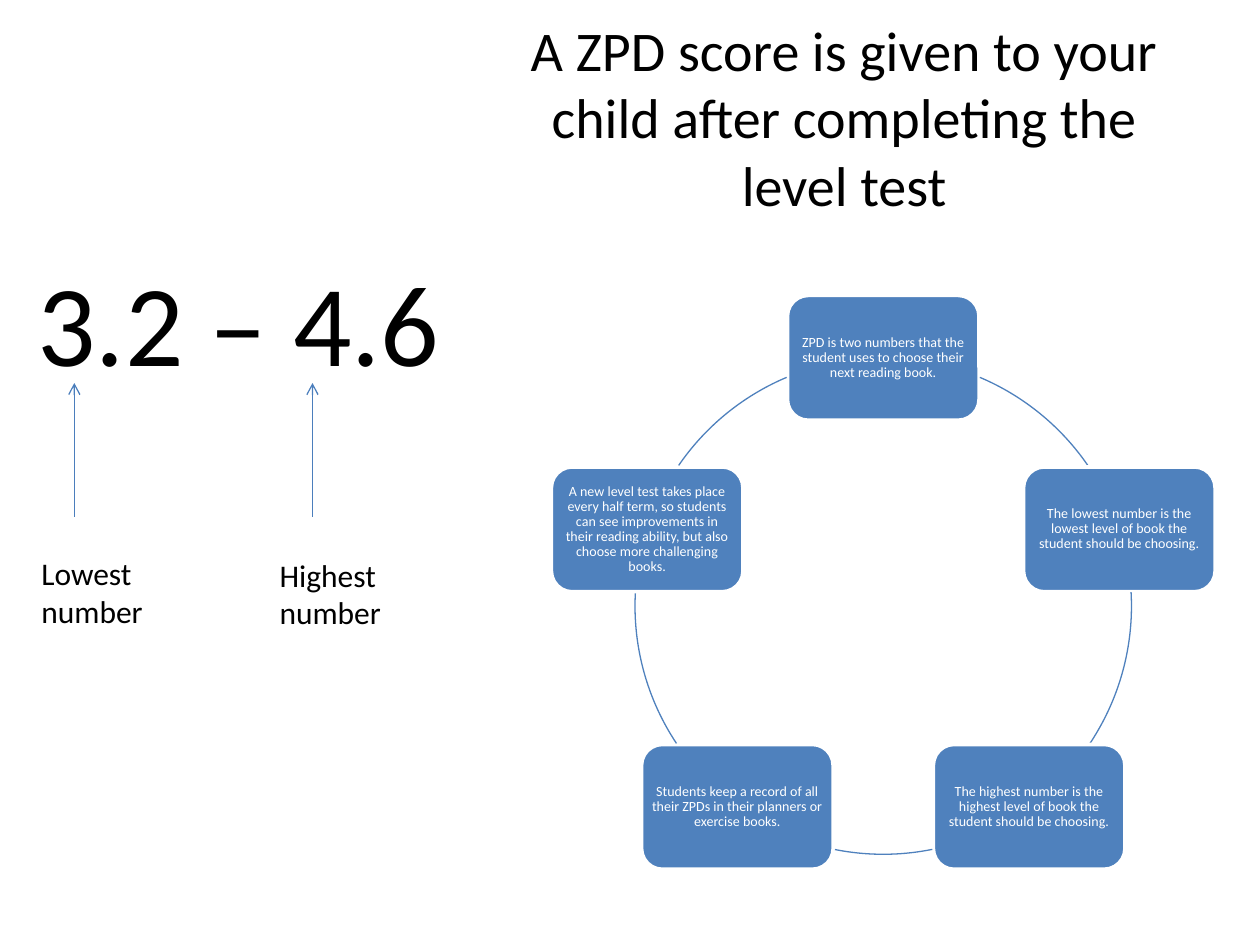
from math import cos, pi, sin

from lxml.etree import SubElement
from pptx import Presentation
from pptx.dml.color import RGBColor
from pptx.enum.shapes import MSO_CONNECTOR, MSO_SHAPE
from pptx.enum.text import MSO_ANCHOR, MSO_AUTO_SIZE, PP_ALIGN
from pptx.oxml.ns import qn
from pptx.util import Inches, Pt

# Content
TITLE = "A ZPD score is given to your child after completing the level test"
SCORE = "3.2 – 4.6"
LABELS = [  # text, box (left, top, width, height), arrow x
    ("Lowest number", (0.23, 4.35, 1.65, 0.71), 0.59),
    ("Highest number", (2.12, 4.36, 1.18, 0.71), 2.48),
]
STEPS = [  # clockwise from the top
    "ZPD is two numbers that the student uses to choose their next reading book.",
    "The lowest number is the lowest level of book the student should be choosing.",
    "The highest number is the highest level of book the student should be choosing.",
    "Students keep a record of all their ZPDs in their planners or exercise books.",
    "A new level test takes place every half term, so students can see improvements "
    "in their reading ability, but also choose more challenging books.",
]
# Visible gaps between neighbouring boxes, degrees clockwise from the right
ARCS = [(292.9, 325.5), (356.8, 33.6), (78.6, 101.4), (146.4, 183.2), (214.5, 247.1)]

# Style
FONT = "Calibri"
BLACK = RGBColor(0x00, 0x00, 0x00)
WHITE = RGBColor(0xFF, 0xFF, 0xFF)
BLUE = RGBColor(0x4F, 0x81, 0xBD)
ARROW_BLUE = RGBColor(0x4B, 0x7E, 0xBC)

# Geometry in inches
CENTER_X, CENTER_Y, RADIUS = 7.01, 4.81, 1.97
BOX_WIDTH, BOX_HEIGHT = 1.52, 0.99
ARROW_BOTTOM, ARROW_TOP = 4.1, 3.04


def write(shape, text, size, color=BLACK, align=PP_ALIGN.LEFT,
          anchor=MSO_ANCHOR.TOP, margin=None, spacing=None):
    frame = shape.text_frame
    frame.text = text
    frame.word_wrap = True
    frame.auto_size = MSO_AUTO_SIZE.NONE
    frame.vertical_anchor = anchor
    if margin is not None:
        frame.margin_left = frame.margin_right = Inches(margin)
        frame.margin_top = frame.margin_bottom = Inches(margin)
    paragraph = frame.paragraphs[0]
    paragraph.alignment = align
    if spacing:
        paragraph.line_spacing = spacing
    font = paragraph.runs[0].font
    font.name, font.size = FONT, Pt(size)
    font.color.rgb = color


def add_text(slide, box, text, **style):
    write(slide.shapes.add_textbox(*map(Inches, box)), text, **style)


def add_arrow(slide, x):
    arrow = slide.shapes.add_connector(
        MSO_CONNECTOR.STRAIGHT, Inches(x), Inches(ARROW_BOTTOM), Inches(x), Inches(ARROW_TOP))
    arrow.line.color.rgb = ARROW_BLUE
    arrow.line.width = Pt(0.75)
    properties = arrow._element.spPr
    SubElement(properties.find(qn("a:ln")), qn("a:tailEnd"), type="arrow")
    SubElement(properties, qn("a:effectLst"))


def add_step(slide, index, text):
    angle = 2 * pi * index / len(STEPS) - pi / 2
    left = CENTER_X + RADIUS * cos(angle) - BOX_WIDTH / 2
    top = CENTER_Y + RADIUS * sin(angle) - BOX_HEIGHT / 2
    box = slide.shapes.add_shape(
        MSO_SHAPE.ROUNDED_RECTANGLE, Inches(left), Inches(top),
        Inches(BOX_WIDTH), Inches(BOX_HEIGHT))
    box.shadow.inherit = False
    box.fill.solid()
    box.fill.fore_color.rgb = BLUE
    box.line.color.rgb = WHITE
    box.line.width = Pt(2)
    write(box, text, size=8, color=WHITE, align=PP_ALIGN.CENTER,
          anchor=MSO_ANCHOR.MIDDLE, margin=0.03, spacing=0.9)


def add_arc(slide, angles):
    arc = slide.shapes.add_shape(
        MSO_SHAPE.ARC, Inches(CENTER_X - RADIUS), Inches(CENTER_Y - RADIUS),
        Inches(2 * RADIUS), Inches(2 * RADIUS))
    for position, degrees in enumerate(angles):
        arc.adjustments[position] = degrees * 0.6  # 60000 units per degree / 100000
    arc.shadow.inherit = False
    arc.fill.background()
    arc.line.color.rgb = BLUE
    arc.line.width = Pt(0.75)


def main():
    presentation = Presentation()
    presentation.slide_width, presentation.slide_height = Inches(10), Inches(7.5)
    slide = presentation.slides.add_slide(presentation.slide_layouts[5])

    # Title
    title = slide.shapes.title
    title.left, title.top, title.width, title.height = map(Inches, (3.9, 0.3, 5.6, 1.25))
    write(title, TITLE, size=32, align=PP_ALIGN.CENTER, anchor=MSO_ANCHOR.MIDDLE)

    # Example score with its two labels
    add_text(slide, (0.2, 1.94, 3.94, 1.21), SCORE, size=66)
    for text, box, arrow_x in LABELS:
        add_arrow(slide, arrow_x)
        add_text(slide, box, text, size=18)

    # Ring of steps
    for index, (text, angles) in enumerate(zip(STEPS, ARCS)):
        add_step(slide, index, text)
        add_arc(slide, angles)

    presentation.save("out.pptx")


if __name__ == "__main__":
    main()
